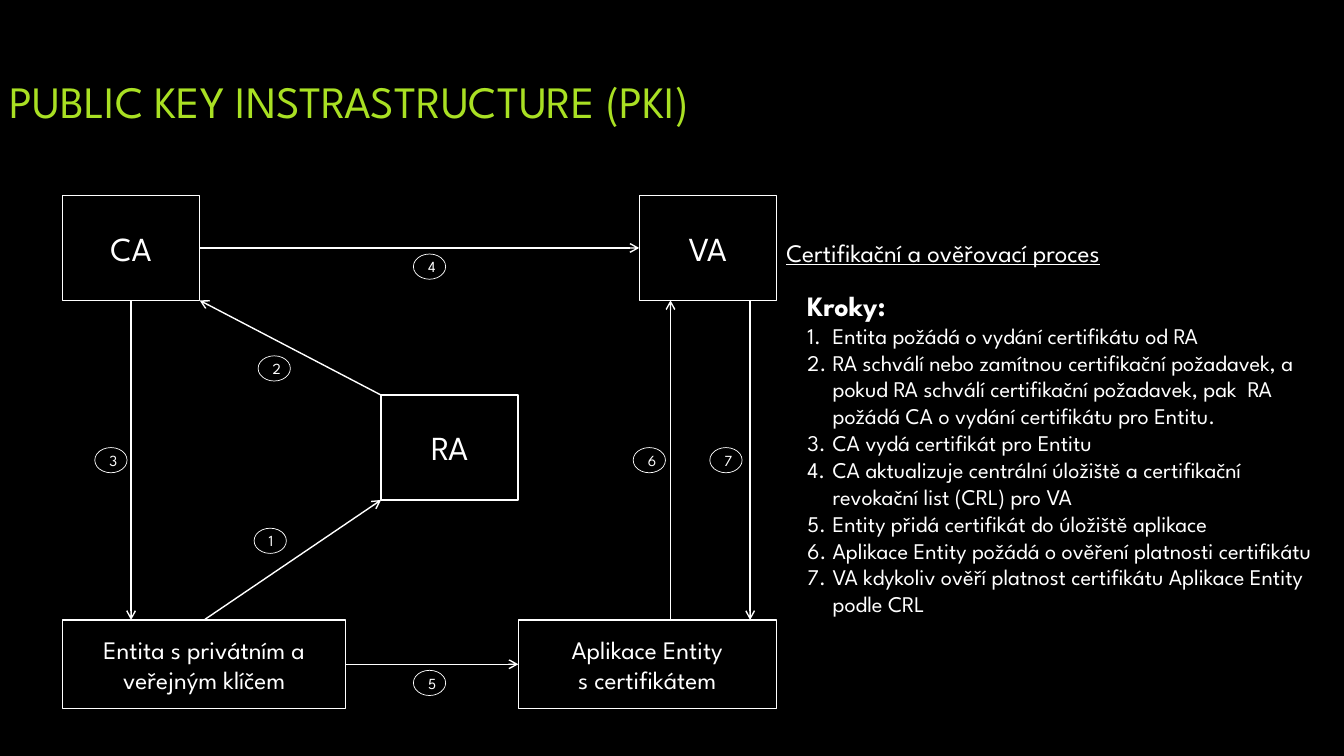
from dataclasses import dataclass

from lxml.etree import SubElement
from pptx import Presentation
from pptx.dml.color import RGBColor
from pptx.enum.shapes import MSO_CONNECTOR, MSO_SHAPE
from pptx.enum.text import MSO_ANCHOR, PP_ALIGN
from pptx.oxml.ns import qn
from pptx.util import Inches, Pt


@dataclass(frozen=True)
class Theme:
    font: str = "League Spartan"
    background: RGBColor = RGBColor(0x00, 0x00, 0x00)
    ink: RGBColor = RGBColor(0xFF, 0xFF, 0xFF)
    accent: RGBColor = RGBColor(0xA9, 0xE0, 0x23)
    title: int = 32
    authority: int = 24
    heading: int = 20
    body: int = 18
    step: int = 16
    badge: int = 11


TOP, LEFT, BOTTOM, RIGHT = range(4)


class PkiSlide:
    def __init__(self, slide, theme):
        self.slide = slide
        self.theme = theme
        slide.background.fill.solid()
        slide.background.fill.fore_color.rgb = theme.background

    def style(self, paragraph, size, color=None, bold=False, underline=False):
        font = paragraph.font
        font.name = self.theme.font
        font.size = Pt(size)
        font.color.rgb = color or self.theme.ink
        font.bold = bold
        font.underline = underline

    def text(self, x, y, width, height, words, size, anchor=MSO_ANCHOR.TOP, **look):
        box = self.slide.shapes.add_textbox(
            Inches(x), Inches(y), Inches(width), Inches(height))
        frame = box.text_frame
        frame.word_wrap = True
        frame.vertical_anchor = anchor
        frame.text = words
        self.style(frame.paragraphs[0], size, **look)
        return frame

    def numbered(self, frame, items, size):
        """Append items to frame as an automatically numbered list."""
        for item in items:
            paragraph = frame.add_paragraph()
            paragraph.text = item
            properties = paragraph._p.get_or_add_pPr()
            properties.set("marL", str(Inches(0.25)))
            properties.set("indent", str(Inches(-0.25)))
            SubElement(properties, qn("a:buFont"), typeface="+mj-lt")
            SubElement(properties, qn("a:buAutoNum"), type="arabicPeriod")
            self.style(paragraph, size)

    def outlined(self, kind, x, y, width, height, words, size, line_width=1):
        shape = self.slide.shapes.add_shape(
            kind, Inches(x), Inches(y), Inches(width), Inches(height))
        shape.shadow.inherit = False
        shape.fill.background()
        shape.line.color.rgb = self.theme.ink
        shape.line.width = Pt(line_width)
        shape.text_frame.text = words
        paragraph = shape.text_frame.paragraphs[0]
        paragraph.alignment = PP_ALIGN.CENTER
        self.style(paragraph, size)
        return shape

    def authority(self, x, y, words):
        return self.outlined(MSO_SHAPE.RECTANGLE, x, y, 1.36, 1.04, words,
                             self.theme.authority)

    def party(self, x, width, words):
        return self.outlined(MSO_SHAPE.RECTANGLE, x, 6.15, width, 0.88, words,
                             self.theme.body)

    def badge(self, x, y, number):
        self.outlined(MSO_SHAPE.OVAL, x, y, 0.32, 0.25, str(number),
                      self.theme.badge, 0.5)

    def arrow(self, start, end, begin=None, finish=None):
        """Draw an arrow; begin and finish are optional (shape, side) joints."""
        line = self.slide.shapes.add_connector(
            MSO_CONNECTOR.STRAIGHT, *map(Inches, start + end))
        if begin:
            line.begin_connect(*begin)
        if finish:
            line.end_connect(*finish)
        line.line.color.rgb = self.theme.ink
        line.line.width = Pt(1)
        SubElement(line.line._get_or_add_ln(), qn("a:tailEnd"), type="arrow")
        SubElement(line._element.spPr, qn("a:effectLst"))


STEPS = [
    "Entita požádá o vydání certifikátu od RA",
    "RA schválí nebo zamítnou certifikační požadavek, a pokud RA schválí "
    "certifikační požadavek, pak  RA požádá CA o vydání certifikátu pro Entitu.",
    "CA vydá certifikát pro Entitu",
    "CA aktualizuje centrální úložiště a certifikační revokační list (CRL) pro VA",
    "Entity přidá certifikát do úložiště aplikace",
    "Aplikace Entity požádá o ověření platnosti certifikátu",
    "VA kdykoliv ověří platnost certifikátu Aplikace Entity podle CRL",
]
BADGES = [(2.52, 5.24), (2.56, 3.53), (0.94, 4.44), (4.1, 2.52),
          (4.1, 6.65), (6.28, 4.44), (7.04, 4.44)]


def main():
    presentation = Presentation()
    presentation.slide_width = Inches(13.33)
    presentation.slide_height = Inches(7.5)
    theme = Theme()
    pki = PkiSlide(
        presentation.slides.add_slide(presentation.slide_layouts[6]), theme)

    pki.text(0, 0.67, 13.33, 0.65, "PUBLIC KEY INSTRASTRUCTURE (PKI)",
             theme.title, MSO_ANCHOR.MIDDLE, color=theme.accent)

    ca = pki.authority(0.62, 1.94, "CA")
    va = pki.authority(6.34, 1.94, "VA")
    pki.authority(3.78, 3.92, "RA")
    entity = pki.party(0.62, 2.81, "Entita s privátním a veřejným klíčem")
    application = pki.party(5.14, 2.56, "Aplikace Entity\vs certifikátem")

    pki.arrow((2.02, 6.15), (3.78, 4.96), begin=(entity, TOP))
    pki.arrow((3.78, 3.92), (1.98, 2.98))
    pki.arrow((1.3, 2.98), (1.3, 6.15), begin=(ca, BOTTOM))
    pki.arrow((1.98, 2.46), (6.34, 2.46), (ca, RIGHT), (va, LEFT))
    pki.arrow((3.43, 6.59), (5.14, 6.59), (entity, RIGHT), (application, LEFT))
    pki.arrow((6.65, 6.15), (6.65, 2.98))
    pki.arrow((7.44, 2.98), (7.44, 6.15))
    for number, (x, y) in enumerate(BADGES, start=1):
        pki.badge(x, y, number)

    steps = pki.text(7.91, 2.81, 5.28, 4.11, "Kroky:", theme.heading, bold=True)
    pki.numbered(steps, STEPS, theme.step)
    pki.text(7.7, 2.31, 4.68, 0.4, "Certifikační a ověřovací proces",
             theme.body, underline=True)

    presentation.save("out.pptx")


if __name__ == "__main__":
    main()
